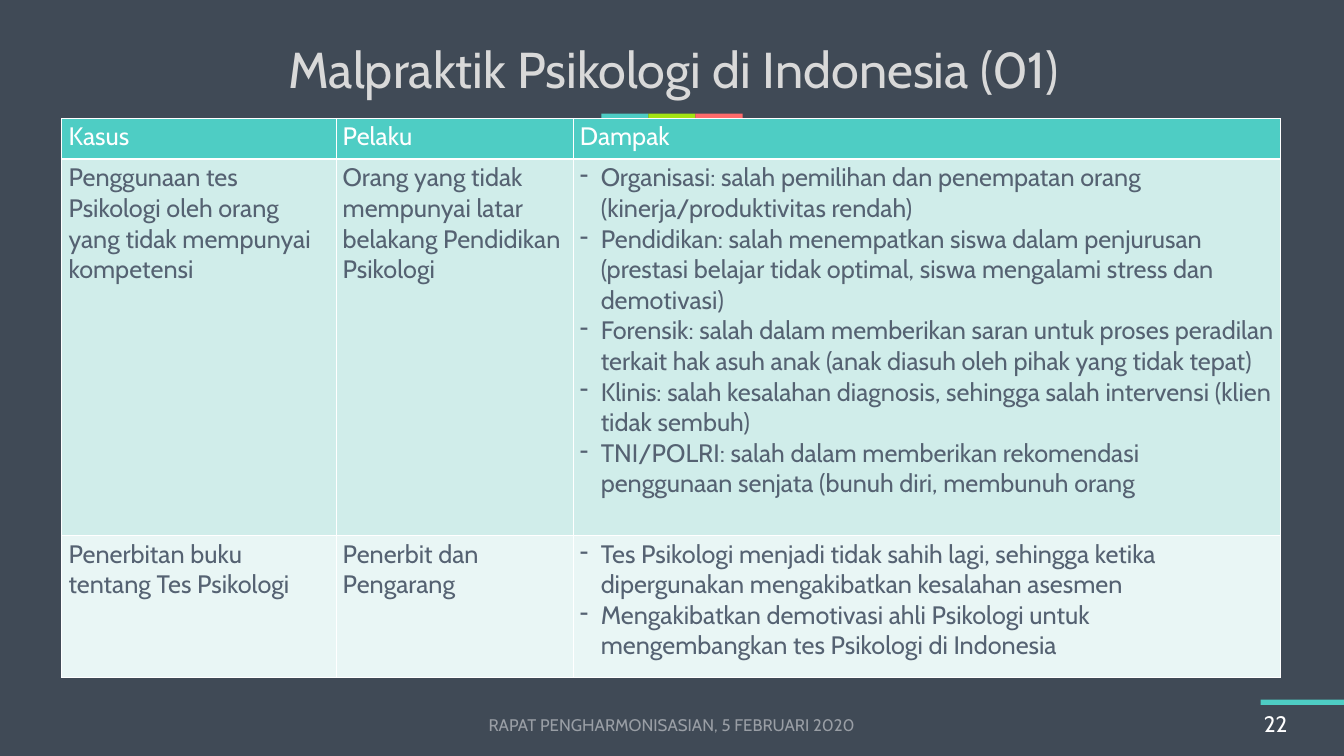
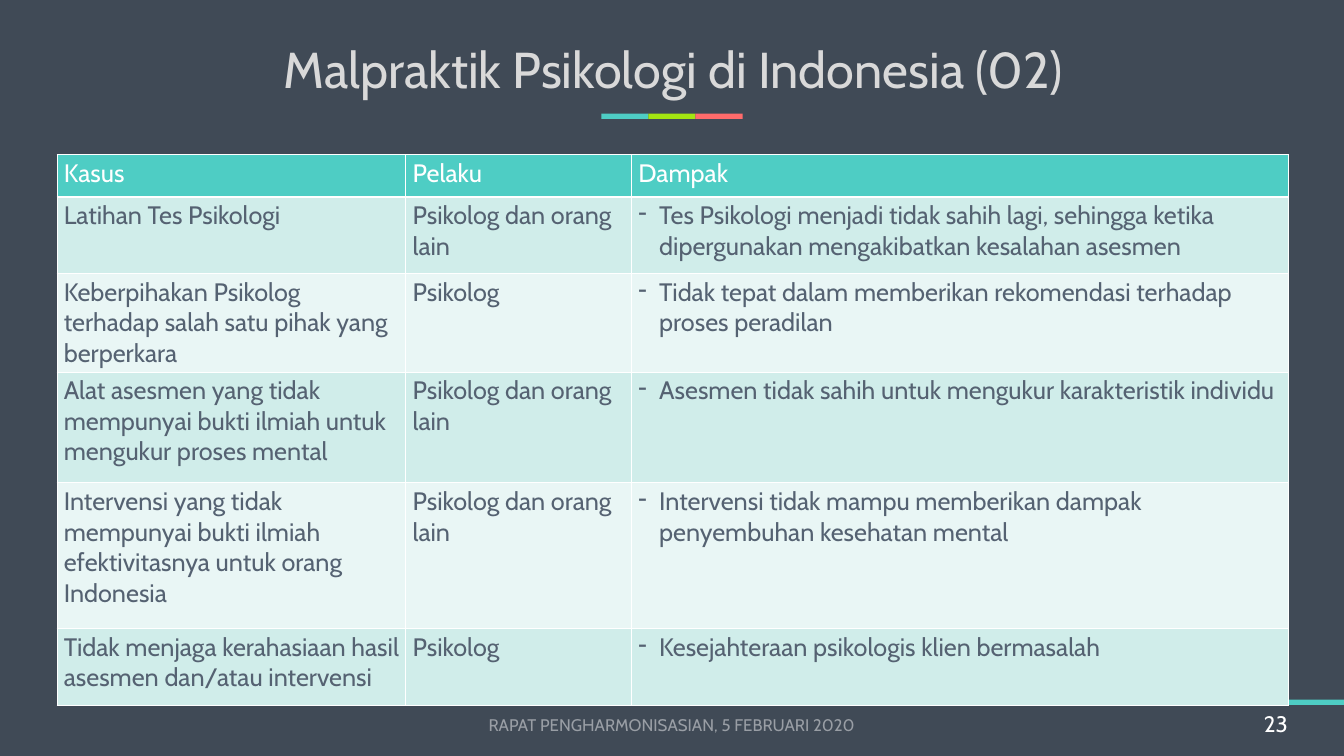
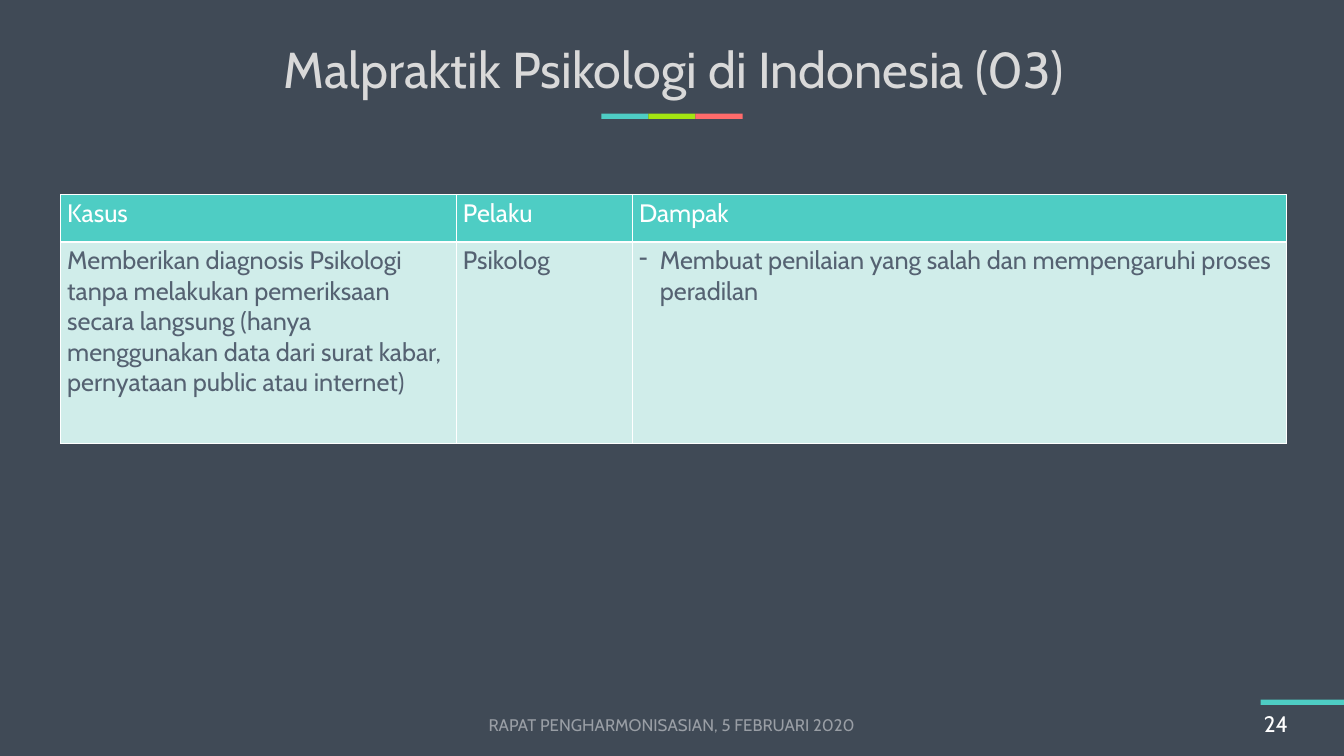
from lxml import etree
from pptx import Presentation
from pptx.dml.color import RGBColor
from pptx.enum.shapes import MSO_SHAPE
from pptx.enum.text import MSO_ANCHOR, MSO_AUTO_SIZE, PP_ALIGN
from pptx.oxml.ns import qn
from pptx.util import Emu, Pt

RECTANGLE = MSO_SHAPE.RECTANGLE
MIDDLE = MSO_ANCHOR.MIDDLE
NO_AUTOFIT = MSO_AUTO_SIZE.NONE
LEFT, CENTER = PP_ALIGN.LEFT, PP_ALIGN.CENTER

EMU_PER_PX = 9144  # 100 px to the inch
SLIDE_WIDTH, SLIDE_HEIGHT = 2000, 1125
TITLE_ONLY = 5

NAVY, TEAL, LIME, CORAL = "404A56", "4ECDC4", "A3E511", "FF6B6B"
WHITE, SLATE = "FFFFFF", "556272"
ROW_TINTS = ("D0EDEA", "E9F6F5")

FONT = "Cabin"
TITLE_TEXT = {"size": 54, "color": "D9D9D9", "alignment": CENTER, "line_spacing": 0.9}
NUMBER_TEXT = {"size": 24, "color": WHITE, "alignment": LEFT}
FOOTER_TEXT = {"size": 18, "color": "999EA5", "alignment": CENTER}
HEADER_TEXT = {"size": 27, "color": WHITE, "alignment": LEFT}
BODY_TEXT = {"size": 27, "color": SLATE, "alignment": LEFT}

FOOTER = "RAPAT PENGHARMONISASIAN, 5 FEBRUARI 2020"
FIRST_NUMBER = 22
HEADINGS = ("Kasus", "Pelaku", "Dampak")
DASH_INDENT = 31
BAND_HEIGHT = 8

INVALID_TEST = ("Tes Psikologi menjadi tidak sahih lagi, sehingga ketika "
                "dipergunakan mengakibatkan kesalahan asesmen")
ANYONE = "Psikolog dan orang lain"

# Each case: who did what, and the list of its effects
CASE_TABLES = [
    {
        "at": (92, 176),
        "columns": (408, 353, 1053),
        "rows": (61, 560, 211),
        "cases": [
            ("Penggunaan tes Psikologi oleh orang yang tidak mempunyai kompetensi",
             "Orang yang tidak mempunyai latar belakang Pendidikan Psikologi",
             ["Organisasi: salah pemilihan dan penempatan orang "
              "(kinerja/produktivitas rendah)",
              "Pendidikan: salah menempatkan siswa dalam penjurusan (prestasi "
              "belajar tidak optimal, siswa mengalami stress dan demotivasi)",
              "Forensik: salah dalam memberikan saran untuk proses peradilan "
              "terkait hak asuh anak (anak diasuh oleh pihak yang tidak tepat)",
              "Klinis: salah kesalahan diagnosis, sehingga salah intervensi "
              "(klien tidak sembuh)",
              "TNI/POLRI: salah dalam memberikan rekomendasi penggunaan senjata "
              "(bunuh diri, membunuh orang"]),
            ("Penerbitan buku tentang Tes Psikologi",
             "Penerbit dan Pengarang",
             [INVALID_TEST,
              "Mengakibatkan demotivasi ahli Psikologi untuk mengembangkan tes "
              "Psikologi di Indonesia"]),
        ],
    },
    {
        "at": (85, 230),
        "columns": (519, 336, 978),
        "rows": (63, 114, 114, 165, 217, 114),
        "cases": [
            ("Latihan Tes Psikologi", ANYONE, [INVALID_TEST]),
            ("Keberpihakan Psikolog terhadap salah satu pihak yang berperkara",
             "Psikolog",
             ["Tidak tepat dalam memberikan rekomendasi terhadap proses peradilan"]),
            ("Alat asesmen yang tidak mempunyai bukti ilmiah untuk mengukur "
             "proses mental",
             ANYONE,
             ["Asesmen tidak sahih untuk mengukur karakteristik individu"]),
            ("Intervensi yang tidak mempunyai bukti ilmiah efektivitasnya untuk "
             "orang Indonesia",
             ANYONE,
             ["Intervensi tidak mampu memberikan dampak penyembuhan kesehatan "
              "mental"]),
            ("Tidak menjaga kerahasiaan hasil asesmen dan/atau intervensi",
             "Psikolog",
             ["Kesejahteraan psikologis klien bermasalah"]),
        ],
    },
    {
        "at": (90, 290),
        "columns": (589, 262, 973),
        "rows": (70, 300),
        "cases": [
            ("Memberikan diagnosis Psikologi tanpa melakukan pemeriksaan secara "
             "langsung (hanya menggunakan data dari surat kabar, pernyataan "
             "public atau internet)",
             "Psikolog",
             ["Membuat penilaian yang salah dan mempengaruhi proses peradilan"]),
        ],
    },
]


def px(length):
    return Emu(length * EMU_PER_PX)


def rgb(hex_color):
    return RGBColor.from_string(hex_color)


def write_paragraph(paragraph, text, style):
    run = paragraph.add_run()
    run.text = text
    run.font.color.rgb = rgb(style["color"])
    font_values = {"name": FONT, "size": Pt(style["size"]), "bold": False}
    for attribute, value in font_values.items():
        setattr(run.font, attribute, value)
    for attribute in ("alignment", "line_spacing"):
        if attribute in style:
            setattr(paragraph, attribute, style[attribute])


def fill_frame(frame, text, style):
    frame_values = {"word_wrap": True, "auto_size": NO_AUTOFIT, "vertical_anchor": MIDDLE}
    for attribute, value in frame_values.items():
        setattr(frame, attribute, value)
    write_paragraph(frame.paragraphs[0], text, style)


def add_label(slide, box, text, style):
    label = slide.shapes.add_textbox(*map(px, box))
    fill_frame(label.text_frame, text, style)


def add_band(slide, left, top, width, color):
    band = slide.shapes.add_shape(
        RECTANGLE, px(left), px(top), px(width), px(BAND_HEIGHT))
    band.shadow.inherit = False
    band.fill.solid()
    band.fill.fore_color.rgb = rgb(color)
    band.line.fill.background()


def add_title(slide, text):
    title = slide.shapes.title
    box = {"left": 54, "top": 38, "width": 1896, "height": 140}
    for attribute, length in box.items():
        setattr(title, attribute, px(length))
    fill_frame(title.text_frame, text, TITLE_TEXT)


def add_frame_elements(slide, number):
    """Add the bands, slide number and footer that every slide carries."""
    for index, color in enumerate((TEAL, LIME, CORAL)):
        add_band(slide, 895 + 70 * index, 169, 70, color)
    add_band(slide, 1876, 1041, 124, TEAL)
    add_label(slide, (1871, 1050, 129, 53), str(number), NUMBER_TEXT)
    add_label(slide, (662, 1048, 675, 60), FOOTER, FOOTER_TEXT)


def add_dash(paragraph):
    properties = paragraph._p.get_or_add_pPr()
    properties.set("marL", str(px(DASH_INDENT)))
    properties.set("indent", str(-px(DASH_INDENT)))
    etree.SubElement(properties, qn("a:buChar")).set("char", "-")


def paint_cell(cell, color, bottom_width):
    """Draw white borders, then the fill, in the order the schema needs."""
    properties = cell._tc.get_or_add_tcPr()
    for side, width in {"L": 1, "R": 1, "T": 1, "B": bottom_width}.items():
        border = etree.SubElement(properties, qn(f"a:ln{side}"), w=str(Pt(width)))
        border_fill = etree.SubElement(border, qn("a:solidFill"))
        etree.SubElement(border_fill, qn("a:srgbClr"), val=WHITE)
    cell.fill.solid()
    cell.fill.fore_color.rgb = rgb(color)


def write_effects(frame, effects):
    for index, effect in enumerate(effects):
        paragraph = frame.add_paragraph() if index else frame.paragraphs[0]
        write_paragraph(paragraph, effect, BODY_TEXT)
        add_dash(paragraph)


def add_case_table(slide, at, columns, rows, cases):
    size = (sum(columns), sum(rows))
    table = slide.shapes.add_table(
        len(rows), len(columns), *map(px, at + size)).table
    for column, width in zip(table.columns, columns):
        column.width = px(width)
    for row, height in zip(table.rows, rows):
        row.height = px(height)

    for cell, heading in zip(table.rows[0].cells, HEADINGS):
        paint_cell(cell, TEAL, 3)
        write_paragraph(cell.text_frame.paragraphs[0], heading, HEADER_TEXT)

    for index, (deed, culprit, effects) in enumerate(cases):
        cells = list(table.rows[index + 1].cells)
        for cell in cells:
            paint_cell(cell, ROW_TINTS[index % 2], 1)
        for cell, text in zip(cells, (deed, culprit)):
            write_paragraph(cell.text_frame.paragraphs[0], text, BODY_TEXT)
        write_effects(cells[2].text_frame, effects)


def main():
    deck = Presentation()
    deck.slide_width, deck.slide_height = px(SLIDE_WIDTH), px(SLIDE_HEIGHT)
    background = deck.slide_master.background.fill
    background.solid()
    background.fore_color.rgb = rgb(NAVY)

    for index, case_table in enumerate(CASE_TABLES):
        slide = deck.slides.add_slide(deck.slide_layouts[TITLE_ONLY])
        add_title(slide, f"Malpraktik Psikologi di Indonesia ({index + 1:02})")
        add_frame_elements(slide, FIRST_NUMBER + index)
        add_case_table(slide, **case_table)

    deck.save("out.pptx")


if __name__ == "__main__":
    main()
